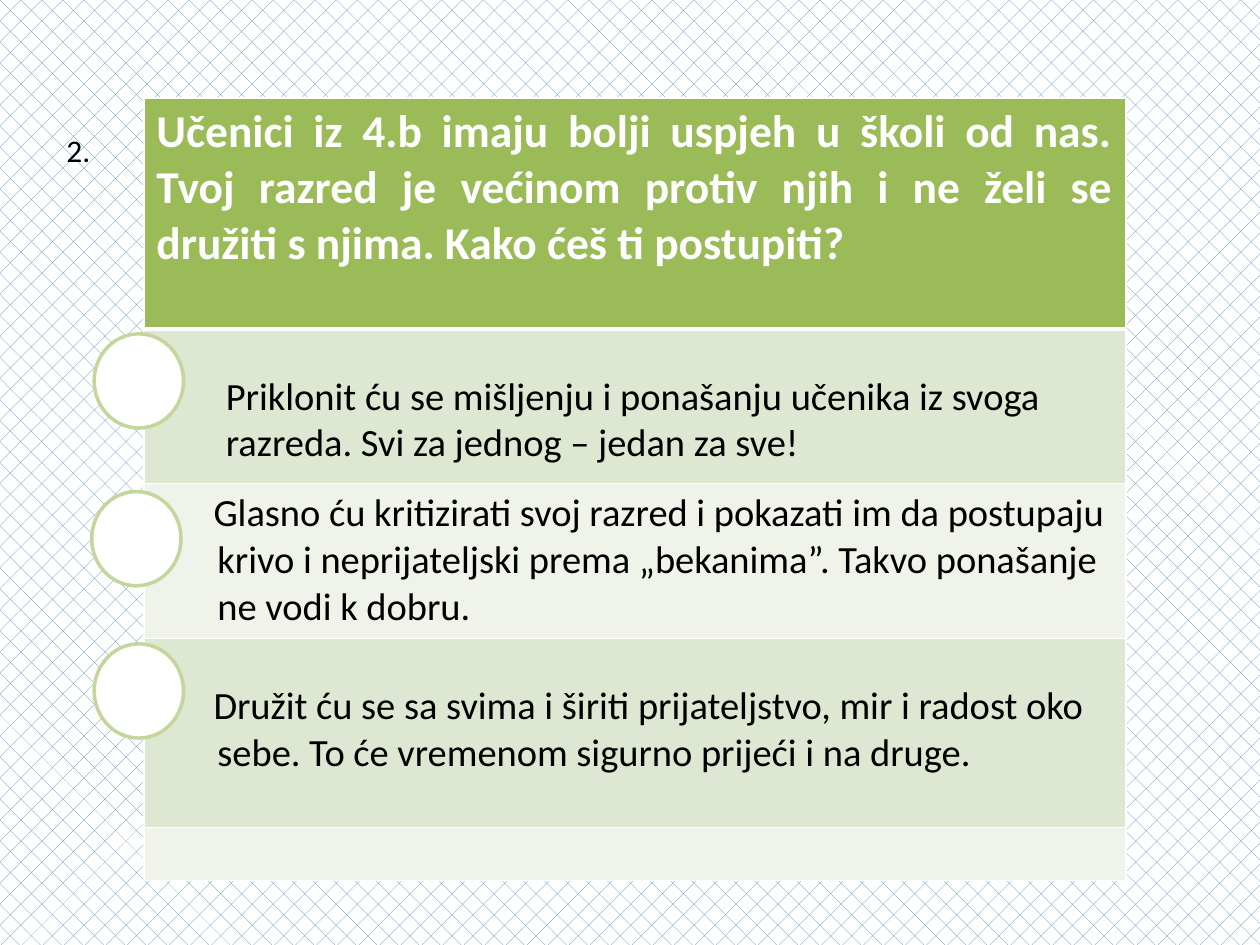
import pptx
import pptx.dml.color
import pptx.enum.dml
import pptx.enum.shapes
import pptx.enum.text
import pptx.oxml
import pptx.oxml.ns
import pptx.util

Cm = pptx.util.Cm
Pt = pptx.util.Pt


def colour(hex_string):
    return pptx.dml.color.RGBColor.from_string(hex_string)


class QuizSlide:
    """Holds the quiz style and the slide that its elements are added to."""

    font = "Calibri"
    black = "000000"
    white = "FFFFFF"
    blue = "4F81BD"
    green = "9BBB59"
    ring = "C3D69B"
    bands = ("DEE7D1", "EFF3EA")

    def __init__(self, presentation):
        self.slide = presentation.slides.add_slide(presentation.slide_layouts[6])

    def background(self):
        fill = self.slide.background.fill
        fill.patterned()
        fill.pattern = pptx.enum.dml.MSO_PATTERN.DOTTED_DIAMOND
        fill.fore_color.rgb = colour(self.blue)
        fill.back_color.rgb = colour(self.white)

    def run(self, paragraph, text, size, hex_string, bold=False):
        run = paragraph.add_run()
        run.text = text
        run.font.name = self.font
        run.font.size = Pt(size)
        run.font.bold = bold
        run.font.color.rgb = colour(hex_string)

    def label(self, text, left, top, width, height):
        shape = self.slide.shapes.add_textbox(Cm(left), Cm(top), Cm(width), Cm(height))
        shape.text_frame.word_wrap = True
        shape.text_frame.auto_size = pptx.enum.text.MSO_AUTO_SIZE.SHAPE_TO_FIT_TEXT
        self.run(shape.text_frame.paragraphs[0], text, 18, self.black)

    def border(self, cell, side, width):
        line = pptx.oxml.parse_xml(
            f'<a:ln{side} {pptx.oxml.ns.nsdecls("a")} w="{Pt(width)}"><a:solidFill>'
            f'<a:srgbClr val="{self.white}"/></a:solidFill></a:ln{side}>'
        )
        cell._tc.get_or_add_tcPr().append(line)

    def table(self, left, top, width, heights):
        frame = self.slide.shapes.add_table(
            len(heights), 1, Cm(left), Cm(top), Cm(width), Cm(sum(heights))
        )
        table = frame.table
        for index, height in enumerate(heights):
            table.rows[index].height = Cm(height)
            cell = table.cell(index, 0)
            widths = {"L": 1, "R": 1, "T": 3 if index == 1 else 1, "B": 1 if index else 3}
            for side, line_width in widths.items():
                self.border(cell, side, line_width)
            cell.fill.solid()
            cell.fill.fore_color.rgb = colour(self.bands[(index - 1) % 2] if index else self.green)
        return table

    def question(self, cell, text):
        paragraph = cell.text_frame.paragraphs[0]
        paragraph.alignment = pptx.enum.text.PP_ALIGN.JUSTIFY
        self.run(paragraph, text, 26, self.white, bold=True)

    def answer(self, cell, margin_top, first_indent, indent, lines):
        cell.margin_top = Cm(margin_top)
        for index, text in enumerate(lines):
            frame = cell.text_frame
            paragraph = frame.add_paragraph() if index else frame.paragraphs[0]
            properties = paragraph._p.get_or_add_pPr()
            properties.set("marL", str(Cm(indent if index else first_indent)))
            self.run(paragraph, text, 22, self.black)

    def circle(self, left, top):
        shape = self.slide.shapes.add_shape(
            pptx.enum.shapes.MSO_SHAPE.FLOWCHART_CONNECTOR, Cm(left), Cm(top), Cm(1.8), Cm(1.9)
        )
        shape.shadow.inherit = False
        shape.fill.solid()
        shape.fill.fore_color.rgb = colour(self.white)
        shape.line.color.rgb = colour(self.ring)
        shape.line.width = Pt(2)


def main():
    presentation = pptx.Presentation()
    presentation.slide_width = Cm(25.4)
    presentation.slide_height = Cm(19.05)

    quiz = QuizSlide(presentation)
    quiz.background()
    quiz.label("2.", 1.09, 2.51, 1.2, 1.02)

    table = quiz.table(2.9, 1.98, 19.8, (4.65, 3.12, 3.12, 3.81, 1.07))
    quiz.question(
        table.cell(0, 0),
        "Učenici iz 4.b imaju bolji uspjeh u školi od nas. Tvoj razred je većinom "
        "protiv njih i ne želi se družiti s njima. Kako ćeš ti postupiti?",
    )
    answers = (
        (0.9, 1.4, 1.4, (
            "Priklonit ću se mišljenju i ponašanju učenika iz svoga",
            "razreda. Svi za jednog – jedan za sve!",
        )),
        (0.13, 1.15, 1.23, (
            "Glasno ću kritizirati svoj razred i pokazati im da postupaju",
            "krivo i neprijateljski prema „bekanima”. Takvo ponašanje",
            "ne vodi k dobru.",
        )),
        (0.9, 1.15, 1.23, (
            "Družit ću se sa svima i širiti prijateljstvo, mir i radost oko",
            "sebe. To će vremenom sigurno prijeći i na druge.",
        )),
    )
    for row, answer in enumerate(answers, start=1):
        quiz.answer(table.cell(row, 0), *answer)

    for left, top in ((1.9, 6.73), (1.85, 9.91), (1.9, 12.98)):
        quiz.circle(left, top)

    presentation.save("out.pptx")


if __name__ == "__main__":
    main()
